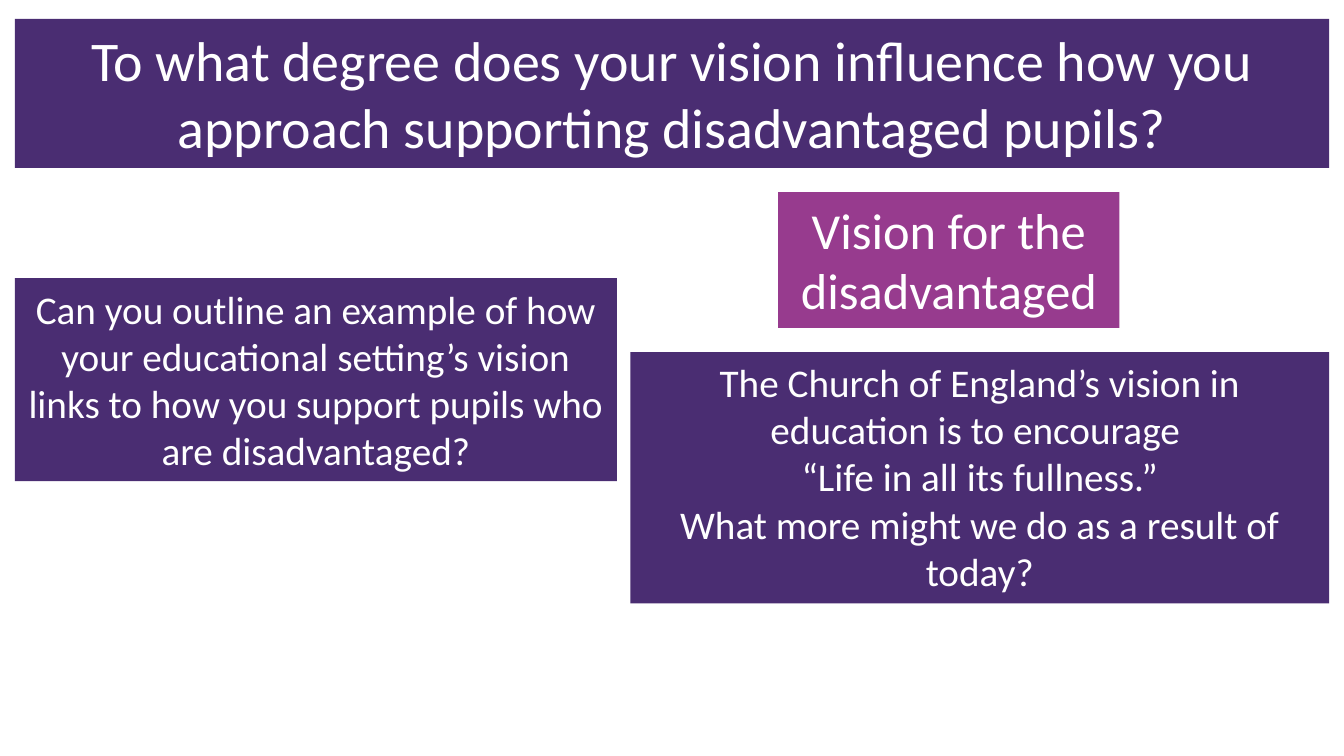
from pptx import Presentation
from pptx.dml.color import RGBColor
from pptx.enum.text import MSO_AUTO_SIZE, MSO_ANCHOR, PP_ALIGN
from pptx.util import Inches, Pt

CENTER = PP_ALIGN.CENTER
TOP = MSO_ANCHOR.TOP
GROW = MSO_AUTO_SIZE.SHAPE_TO_FIT_TEXT

WIDTH = 10
HEIGHT = WIDTH * 9 / 16

THEME = {
    "font": "Calibri",
    "text": RGBColor.from_string("FFFFFF"),
    "purple": RGBColor.from_string("4A2D72"),
    "pink": RGBColor.from_string("973B8E"),
    "title": Pt(30),
    "label": Pt(27),
    "body": Pt(21),
}

PANELS = [
    ("pink", "label", (5.79, 1.43, 2.54, 1.01), ["Vision for the disadvantaged"]),
    ("purple", "body", (4.69, 2.62, 5.2, 1.87), [
        "The Church of England’s vision in education is to encourage ",
        "“Life in all its fullness.”",
        "What more might we do as a result of today?",
    ]),
    ("purple", "title", (0.11, 0.14, 9.78, 1.11), [
        "To what degree does your vision influence how you approach "
        "supporting disadvantaged pupils?",
    ]),
    ("purple", "body", (0.11, 2.07, 4.48, 1.51), [
        "Can you outline an example of how your educational setting’s vision "
        "links to how you support pupils who are disadvantaged?",
    ]),
]


def add_panel(slide, fill, size, place, lines):
    box = slide.shapes.add_textbox(*map(Inches, place))
    box.fill.solid()
    box.fill.fore_color.rgb = THEME[fill]
    frame = box.text_frame
    frame.word_wrap = True
    frame.auto_size = GROW
    frame.vertical_anchor = TOP
    frame.text = "\n".join(lines)
    for para in frame.paragraphs:
        para.alignment = CENTER
        for run in para.runs:
            run.font.name = THEME["font"]
            run.font.size = THEME[size]
            run.font.color.rgb = THEME["text"]


def main():
    deck = Presentation()
    deck.slide_width = Inches(WIDTH)
    deck.slide_height = Inches(HEIGHT)
    slide = deck.slides.add_slide(deck.slide_layouts[6])
    for panel in PANELS:
        add_panel(slide, *panel)
    deck.save("out.pptx")


if __name__ == "__main__":
    main()
